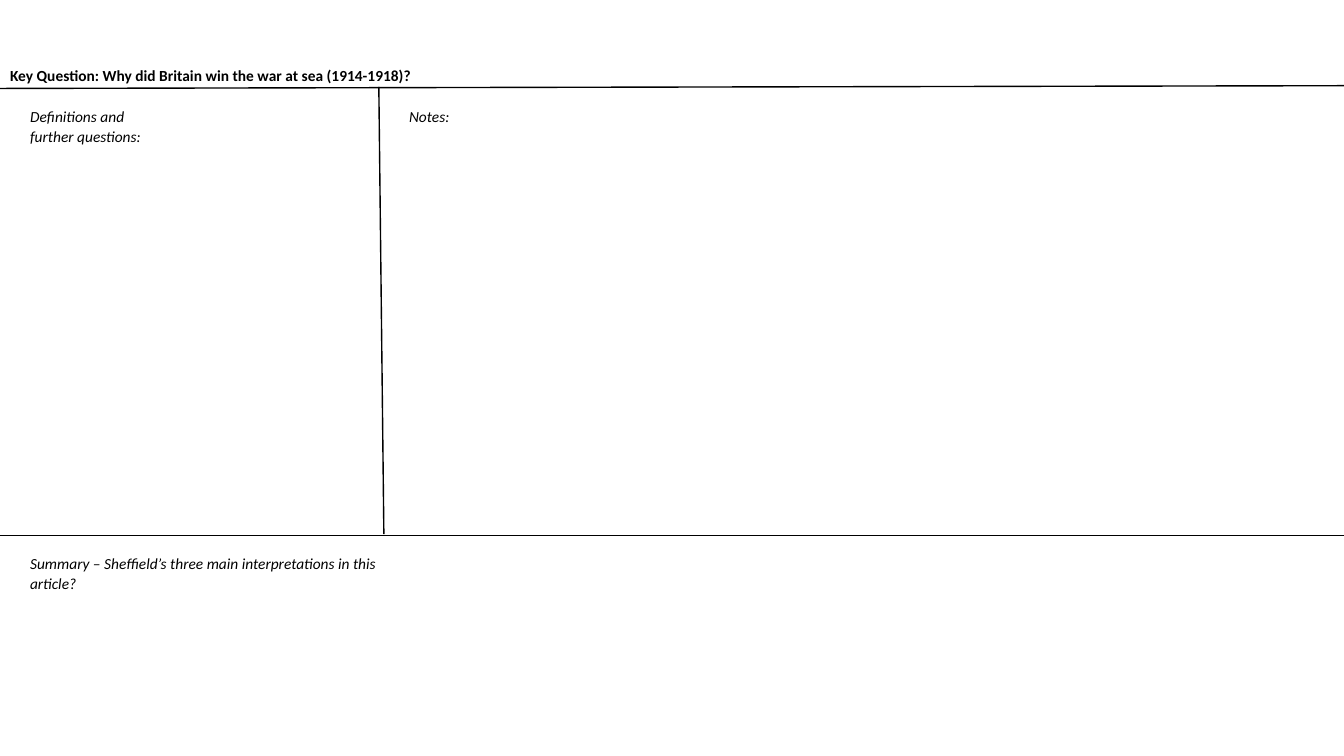
from lxml import etree
from pptx import Presentation
from pptx.dml.color import RGBColor
from pptx.enum import shapes, text
from pptx.oxml import ns
from pptx.util import Pt

BLACK = RGBColor(0, 0, 0)
WIDTH, HEIGHT = 960, 540
QUESTION = "Key Question: Why did Britain win the war at sea (1914-1918)?"
SECTIONS = [
    ("Definitions and further questions:", 14.4, 72, 108),
    ("Notes:", 285.12, 72, 108),
    ("Summary – Sheffield’s three main interpretations in this article?", 14.4, 391.68, 288),
]
SECTION_HEIGHT = 44.64
DIVIDERS = [
    (0, 63.2, WIDTH, 61.2),
    (0, 382.4, WIDTH, 382.4),
    (274.2, 381.6, 270.6, 62),
]


def write(shape, content, *, bold=False, italic=False, spacing=1.0, after=0,
          anchor=text.MSO_ANCHOR.TOP):
    frame = shape.text_frame
    frame.word_wrap = True
    frame.auto_size = text.MSO_AUTO_SIZE.NONE
    frame.vertical_anchor = anchor
    frame.text = content
    paragraph = frame.paragraphs[0]
    paragraph.alignment = text.PP_ALIGN.LEFT
    paragraph.line_spacing = spacing
    paragraph.space_before = Pt(0)
    paragraph.space_after = Pt(after)
    font = paragraph.runs[0].font
    font.name, font.size = "Calibri", Pt(11)
    font.bold, font.italic = bold, italic
    font.color.rgb = BLACK


presentation = Presentation()
presentation.slide_width, presentation.slide_height = Pt(WIDTH), Pt(HEIGHT)
slide = presentation.slides.add_slide(presentation.slide_layouts[5])

title = slide.shapes.title
title.left, title.top, title.width, title.height = Pt(0), Pt(36), Pt(WIDTH), Pt(36)
write(title, QUESTION, bold=True, anchor=text.MSO_ANCHOR.MIDDLE)

for ends in DIVIDERS:
    divider = slide.shapes.add_connector(
        shapes.MSO_CONNECTOR.STRAIGHT, *(Pt(end) for end in ends))
    divider.line.color.rgb = BLACK
    divider.line.width = Pt(1)
    etree.SubElement(divider._element.spPr, ns.qn("a:effectLst"))

for content, left, top, width in SECTIONS:
    section = slide.shapes.add_textbox(Pt(left), Pt(top), Pt(width), Pt(SECTION_HEIGHT))
    write(section, content, italic=True, spacing=1.07, after=8)

presentation.save("out.pptx")
